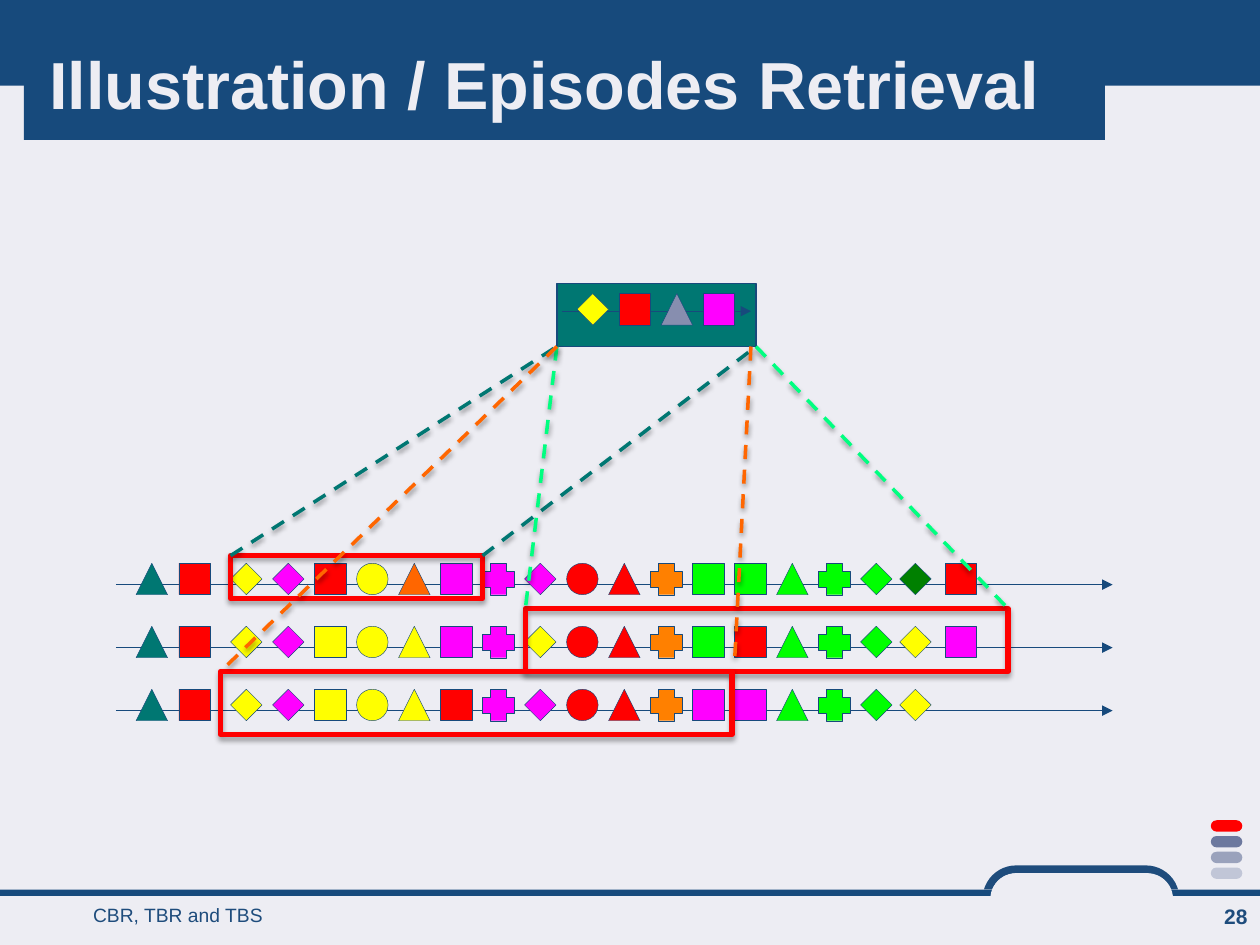
import pptx
import pptx.util
import pptx.dml.color
import pptx.enum.dml
import pptx.enum.shapes
import pptx.enum.text
import pptx.oxml
import pptx.oxml.ns

Inches, Pt = pptx.util.Inches, pptx.util.Pt
SHAPE = pptx.enum.shapes.MSO_SHAPE
ALIGN = pptx.enum.text.PP_ALIGN
NAVY, PALE, INK = "174A7C", "EDEDF3", "1E4C7C"
TEAL, RED, MINT, ORANGE = "007772", "FF0000", "00FF80", "FF6600"

KINDS = {"t": SHAPE.ISOSCELES_TRIANGLE, "r": SHAPE.RECTANGLE, "d": SHAPE.DIAMOND,
         "e": SHAPE.OVAL, "p": SHAPE.CROSS}
COLOURS = {"T": TEAL, "R": RED, "Y": "FFFF00", "M": "FF00FF", "A": ORANGE,
           "O": "FF8000", "G": "00FF00", "D": "008000", "S": "878EAF"}
EVENT_X = [1.08, 1.42] + [1.83 + i / 3 for i in range(16)] + [7.14, 7.5]
EVENT_KINDS = "trddretrpdetprrtpddr"
SEQUENCES = [(4.47, "TRYMRYAMMMRROGGGGGDR"),
             (4.97, "TRYMYYYMMYRROGRGGGYM"),
             (5.47, "TRYMYYYRMMRROMMGGGY")]
EPISODES = [(1.83, 4.41, 2, 0.34), (4.17, 4.83, 3.83, 0.5), (1.75, 5.33, 4.06, 0.5)]
MATCHES = [(1.83, 4.41, 4.42, 2.75, TEAL), (3.83, 4.41, 6, 2.75, TEAL),
           (4.42, 2.75, 4.17, 4.83, MINT), (6, 2.75, 8, 4.83, MINT),
           (4.42, 2.75, 1.75, 5.33, ORANGE), (5.96, 2.75, 5.83, 5.25, ORANGE)]


def rgb(value):
    return pptx.dml.color.RGBColor.from_string(value)


class Deck:
    """Draws styled elements on the current slide."""

    font = "Arial"

    def __init__(self):
        self.prs = pptx.Presentation()
        self.prs.slide_width, self.prs.slide_height = Inches(10), Inches(7.5)
        self.s = self.prs.slides.add_slide(self.prs.slide_layouts[5])
        self.s.background.fill.solid()
        self.s.background.fill.fore_color.rgb = rgb(PALE)

    def effects(self, sp, alpha=None, dist=0):
        ns = pptx.oxml.ns.nsdecls("a")
        shadow = ""
        if alpha:
            shadow = (f'<a:outerShdw blurRad="{Pt(3.1)}" dist="{Pt(dist)}" dir="5400000" '
                      f'rotWithShape="0"><a:srgbClr val="000000"><a:alpha val="{alpha * 1000}"/>'
                      '</a:srgbClr></a:outerShdw>')
        xml = f"<a:effectLst {ns}>{shadow}</a:effectLst>"
        sp.element.spPr.append(pptx.oxml.parse_xml(xml))

    def shape(self, kind, x, y, w, h, fill=None, line=None, width=0.25):
        sp = self.s.shapes.add_shape(kind, Inches(x), Inches(y), Inches(w), Inches(h))
        if fill:
            sp.fill.solid()
            sp.fill.fore_color.rgb = rgb(fill)
        else:
            sp.fill.background()
        if line:
            sp.line.color.rgb = rgb(line)
            sp.line.width = Pt(width)
        else:
            sp.line.fill.background()
        if kind == SHAPE.ROUNDED_RECTANGLE:
            sp.adjustments[0] = 0.5
        sp.shadow.inherit = False
        return sp

    def rect(self, *box, **style):
        return self.shape(SHAPE.RECTANGLE, *box, **style)

    def pill(self, *box, **style):
        return self.shape(SHAPE.ROUNDED_RECTANGLE, *box, **style)

    def event(self, kind, colour, x, y):
        self.shape(KINDS[kind], x, y, 0.25, 0.25, COLOURS[colour], NAVY)

    def episode(self, x, y, w, h):
        sp = self.s.shapes.add_shape(SHAPE.RECTANGLE, Inches(x), Inches(y), Inches(w), Inches(h))
        sp.fill.background()
        sp.line.color.rgb = rgb(RED)
        sp.line.width = Pt(3)
        self.effects(sp, 35, 1.8)

    def line(self, x1, y1, x2, y2, colour, width):
        sp = self.s.shapes.add_connector(pptx.enum.shapes.MSO_CONNECTOR.STRAIGHT,
                                         Inches(x1), Inches(y1), Inches(x2), Inches(y2))
        sp.line.color.rgb = rgb(colour)
        sp.line.width = Pt(width)
        return sp

    def arrow(self, x1, x2, y):
        sp = self.line(x1, y, x2, y, NAVY, 0.75)
        ns = pptx.oxml.ns.nsdecls("a")
        sp.line.fill
        sp.element.spPr.find(pptx.oxml.ns.qn("a:ln")).append(
            pptx.oxml.parse_xml(f'<a:tailEnd {ns} type="triangle"/>'))
        self.effects(sp)

    def match(self, x1, y1, x2, y2, colour):
        sp = self.line(x1, y1, x2, y2, colour, 2)
        sp.line.dash_style = pptx.enum.dml.MSO_LINE.DASH
        self.effects(sp, 38, 1.6)

    def run(self, p, text, size, colour, bold=False):
        r = p.add_run()
        r.text = text
        r.font.name, r.font.size, r.font.bold = self.font, Pt(size), bold
        r.font.color.rgb = rgb(colour)

    def title(self, text, x, y, w, h):
        sp = self.s.shapes.title
        sp.element.getparent().append(sp.element)
        sp.left, sp.top, sp.width, sp.height = Inches(x), Inches(y), Inches(w), Inches(h)
        sp.fill.solid()
        sp.fill.fore_color.rgb = rgb(NAVY)
        tf = sp.text_frame
        tf.word_wrap = False
        tf.auto_size = pptx.enum.text.MSO_AUTO_SIZE.NONE
        tf.vertical_anchor = pptx.enum.text.MSO_ANCHOR.MIDDLE
        tf.margin_left = tf.margin_right = Inches(0.2)
        tf.margin_top = tf.margin_bottom = 0
        tf.paragraphs[0].alignment = ALIGN.LEFT
        self.run(tf.paragraphs[0], text, 38, PALE, True)

    def text(self, text, x, y, w, h, size, bold=False, align=ALIGN.LEFT):
        sp = self.s.shapes.add_textbox(Inches(x), Inches(y), Inches(w), Inches(h))
        tf = sp.text_frame
        tf.word_wrap = True
        tf.paragraphs[0].alignment = align
        self.run(tf.paragraphs[0], text, size, INK, bold)


def main():
    deck = Deck()
    deck.rect(0, -0.01, 10, 0.69, fill=NAVY)
    deck.pill(7.83, 6.9, 1.5, 0.47, fill=PALE, line=INK, width=4.5)
    deck.rect(0, 7.06, 10, 0.44, fill=PALE)
    deck.rect(0, 7.06, 10, 0.05, fill=NAVY)
    deck.pill(7.86, 6.93, 1.45, 0.41, fill=PALE)
    for i, colour in enumerate([RED, "6C789E", "9AA2BC", "C1C6D7"]):
        deck.pill(9.61, 6.51 + i * 0.125, 0.25, 0.09, fill=colour)

    deck.title("Illustration / Episodes Retrieval", 0.19, 0.21, 8.58, 0.9)
    deck.text("CBR, TBR and TBS", 0.64, 7.12, 3.64, 0.28, 11)
    deck.text("28", 9.33, 7.12, 0.67, 0.33, 12, True, ALIGN.RIGHT)

    for y, colours in SEQUENCES:
        deck.arrow(0.92, 8.83, y + 0.17)
        for kind, colour, x in zip(EVENT_KINDS, colours, EVENT_X):
            deck.event(kind, colour, x, y)

    deck.rect(4.42, 2.25, 1.58, 0.5, fill=TEAL, line=NAVY, width=0.75)
    deck.arrow(4.46, 5.96, 2.47)
    for i, (kind, colour) in enumerate(zip("drtr", "YRSM")):
        deck.event(kind, colour, 4.58 + i / 3, 2.33)

    for box in EPISODES:
        deck.episode(*box)
    for match in MATCHES:
        deck.match(*match)
    deck.prs.save("out.pptx")


if __name__ == "__main__":
    main()
